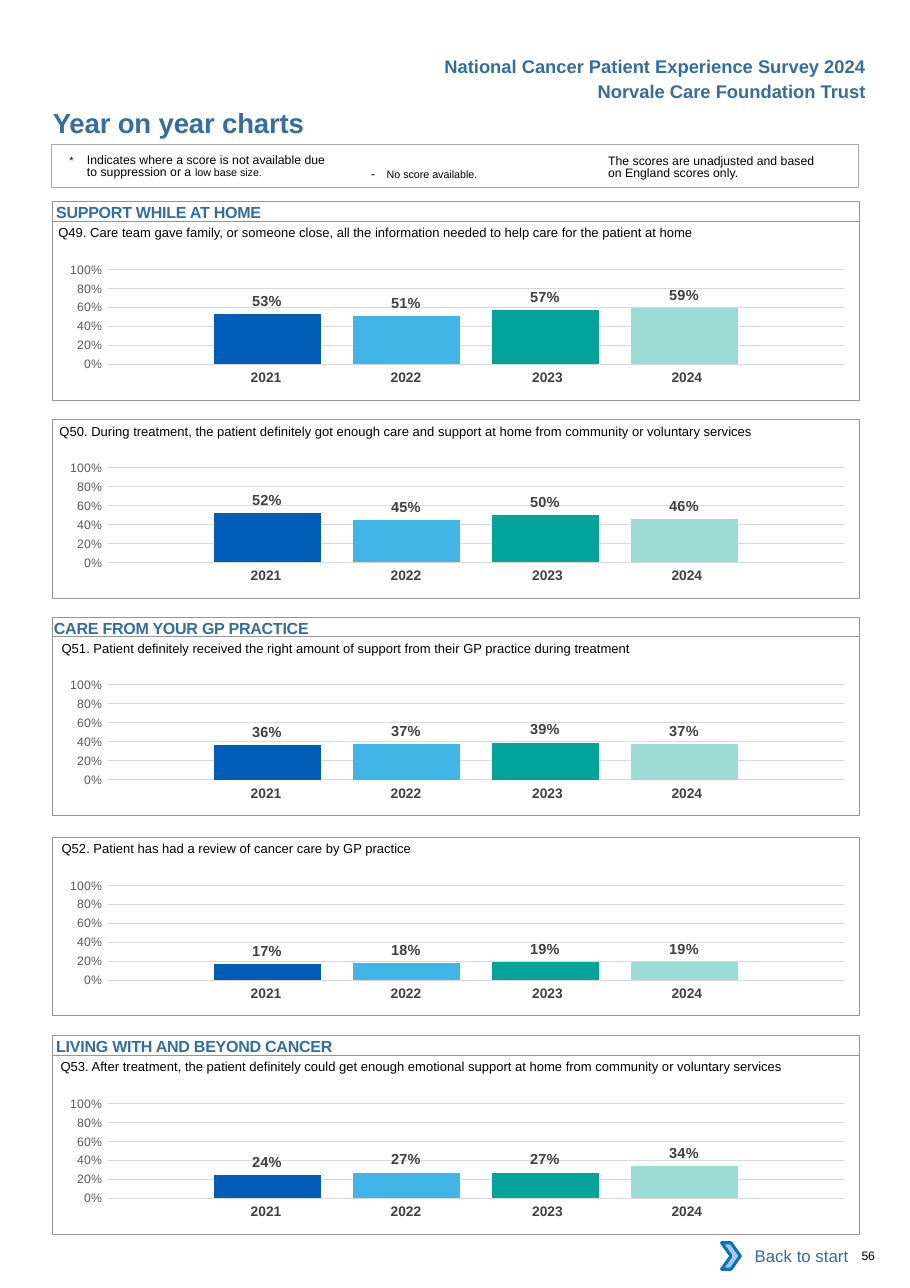
from lxml.etree import SubElement
from pptx import Presentation
from pptx.chart.data import CategoryChartData
from pptx.dml.color import RGBColor
from pptx.enum.chart import XL_CHART_TYPE, XL_LABEL_POSITION, XL_TICK_MARK
from pptx.enum.shapes import MSO_SHAPE
from pptx.enum.text import MSO_ANCHOR, PP_ALIGN
from pptx.oxml import parse_xml
from pptx.oxml.ns import nsdecls, qn
from pptx.util import Inches, Pt

COLORS = {
    "heading": "336E9F", "text": "000000", "year": "414042", "axis": "595959",
    "label": "404040", "grid": "D9D9D9", "frame": "939598", "note frame": "A9AAAD",
    "white": "FFFFFF", "arrow": "A8C7E9", "arrow line": "0A74BB",
}
YEARS = {"2021": "005EB8", "2022": "41B6E6", "2023": "00A499", "2024": "9CDCD7"}
YEAR_COLUMNS = [(1.27, 0), (1.27, 0), (1.34, 0.04), (1.27, 0.12)]  # width, right margin
PLOT_AREA = {"x": 0.079, "y": 0.145, "w": 0.915, "h": 0.666}
NO_GRID_STYLE = "{2D5ABB26-0587-4C30-8999-92F81FD0307C}"
FRAME_LEFT, FRAME_WIDTH, FRAME_HEIGHT = 0.48, 7.32, 1.62

# Frame top, question left, question, scores by year
QUESTIONS = [
    (2.01, 0.53, "Q49. Care team gave family, or someone close, all the information needed "
     "to help care for the patient at home", [0.53, 0.51, 0.57, 0.59]),
    (3.81, 0.54, "Q50. During treatment, the patient definitely got enough care and support "
     "at home from community or voluntary services", [0.52, 0.45, 0.50, 0.46]),
    (5.78, 0.56, "Q51. Patient definitely received the right amount of support from their "
     "GP practice during treatment", [0.36, 0.37, 0.39, 0.37]),
    (7.60, 0.56, "Q52. Patient has had a review of cancer care by GP practice",
     [0.17, 0.18, 0.19, 0.19]),
    (9.58, 0.55, "Q53. After treatment, the patient definitely could get enough emotional "
     "support at home from community or voluntary services", [0.24, 0.27, 0.27, 0.34]),
]
# Top, text indent, section
SECTIONS = [
    (1.83, 0.03, "SUPPORT WHILE AT HOME"),
    (5.60, 0.01, "CARE FROM YOUR GP PRACTICE"),
    (9.40, 0.03, "LIVING WITH AND BEYOND CANCER"),
]


def set_attributes(target, values):
    for name, value in values.items():
        setattr(target, name, value)


def set_font(font, size, color, bold=False, name="Arial"):
    set_attributes(font, {"size": Pt(size), "bold": bold, "name": name})
    font.color.rgb = RGBColor.from_string(COLORS[color])


def write_text(frame, parts, color="text", bold=False, align=PP_ALIGN.LEFT, margins=(0, 0, 0, 0),
               anchor=MSO_ANCHOR.TOP, line_spacing=None):
    """Write parts of (text, size, letter spacing) as one paragraph."""
    left, top, right, bottom = map(Inches, margins)
    set_attributes(frame, {
        "word_wrap": True, "vertical_anchor": anchor, "margin_left": left,
        "margin_top": top, "margin_right": right, "margin_bottom": bottom,
    })
    paragraph = frame.paragraphs[0]
    set_attributes(paragraph, {"alignment": align, "line_spacing": line_spacing})
    for text, size, letter_spacing in parts:
        run = paragraph.add_run()
        run.text = text
        set_font(run.font, size, color, bold)
        run.font._element.set("spc", str(round(letter_spacing * 100)))
    return paragraph


def add_text(slide, box, parts, **text_format):
    shape = slide.shapes.add_textbox(*map(Inches, box))
    return write_text(shape.text_frame, parts, **text_format)


def add_box(slide, box, fill=None, line=None, width=0.5, kind=MSO_SHAPE.RECTANGLE):
    shape = slide.shapes.add_shape(kind, *map(Inches, box))
    shape.shadow.inherit = False
    for format_part, color in ((shape.fill, fill), (shape.line.fill, line)):
        if color:
            format_part.solid()
            format_part.fore_color.rgb = RGBColor.from_string(COLORS[color])
        else:
            format_part.background()
    if line:
        shape.line.width = Pt(width)
    return shape


def style_value_axis(axis):
    set_attributes(axis, {
        "minimum_scale": 0, "maximum_scale": 1, "major_unit": 0.2,
        "major_tick_mark": XL_TICK_MARK.NONE, "minor_tick_mark": XL_TICK_MARK.NONE,
        "has_major_gridlines": True,
    })
    set_attributes(axis.tick_labels, {"number_format": "0%", "number_format_is_linked": False})
    set_font(axis.tick_labels.font, 8, "axis")
    axis.format.line.fill.background()
    grid_line = axis.major_gridlines.format.line
    grid_line.color.rgb = RGBColor.from_string(COLORS["grid"])
    grid_line.width = Pt(0.75)


def clear_background_and_place_plot(chart):
    chart_element = chart._chartSpace.find(qn("c:chart"))
    chart_element.addnext(parse_xml(
        f'<c:spPr {nsdecls("c", "a")}><a:noFill/><a:ln><a:noFill/></a:ln></c:spPr>'))
    plot_area = chart_element.find(qn("c:plotArea"))
    for layout in plot_area.findall(qn("c:layout")):
        plot_area.remove(layout)
    layout = parse_xml(f'<c:layout {nsdecls("c")}><c:manualLayout/></c:layout>')
    settings = {"layoutTarget": "inner", "xMode": "edge", "yMode": "edge", **PLOT_AREA}
    for name, value in settings.items():
        SubElement(layout[0], qn(f"c:{name}")).set("val", str(value))
    plot_area.insert(0, layout)


def add_score_chart(slide, top, scores):
    data = CategoryChartData(number_format="0%")
    data.categories = ["1"]
    for number, score in enumerate(scores, 1):
        data.add_series(f"Series {number}", [score])
    chart = slide.shapes.add_chart(
        XL_CHART_TYPE.COLUMN_CLUSTERED, Inches(0.39), Inches(top),
        Inches(7.32), Inches(1.29), data).chart
    set_attributes(chart, {"has_legend": False, "has_title": False})
    set_font(chart.font, 10, "text", name="Calibri")
    chart.category_axis.visible = False
    style_value_axis(chart.value_axis)
    plot = chart.plots[0]
    set_attributes(plot, {"gap_width": 200, "overlap": -30, "vary_by_categories": False})
    for series, color in zip(plot.series, YEARS.values()):
        series.format.fill.solid()
        series.format.fill.fore_color.rgb = RGBColor.from_string(color)
        set_attributes(series.data_labels, {
            "show_value": True, "position": XL_LABEL_POSITION.OUTSIDE_END,
            "number_format": "0%", "number_format_is_linked": False,
        })
        set_font(series.data_labels.font, 9.5, "label", bold=True)
    clear_background_and_place_plot(chart)


def add_year_table(slide, top):
    table = slide.shapes.add_table(1, len(YEARS), Inches(1.73), Inches(top),
                                   Inches(5.15), Inches(0.27)).table
    set_attributes(table, {"first_row": False, "horz_banding": False})
    table._tbl.tblPr.find(qn("a:tableStyleId")).text = NO_GRID_STYLE
    for index, (year, (width, right_margin)) in enumerate(zip(YEARS, YEAR_COLUMNS)):
        table.columns[index].width = Inches(width)
        cell = table.cell(0, index)
        cell.fill.background()
        set_attributes(cell, {"margin_left": Inches(0.1), "margin_right": Inches(right_margin)})
        paragraph = cell.text_frame.paragraphs[0]
        set_attributes(paragraph, {"text": year, "alignment": PP_ALIGN.CENTER})
        set_font(paragraph.runs[0].font, 9, "year", bold=True)


def add_question(slide, top, left, question, scores):
    add_text(slide, (left, top - 0.06, 7.2, 0.24), [(question, 8.5, 0)], margins=(0, 0.09, 0, 0))
    add_score_chart(slide, top + 0.25, scores)
    add_year_table(slide, top + 1.3)
    add_box(slide, (FRAME_LEFT, top, FRAME_WIDTH, FRAME_HEIGHT), line="frame")


def add_notes(slide):
    add_box(slide, (0.47, 1.31, FRAME_WIDTH, 0.39), line="note frame", width=0.75)
    paragraph = add_text(
        slide, (0.63, 1.37, 2.4, 0.27),
        [("*\t", 7, 0), ("Indicates where a score is not available due to suppression or a ", 8, 0),
         ("low base size.", 7, 0)], margins=(0, 0.03, 0, 0), line_spacing=Pt(8.1))
    for name, inches in {"marL": 0.16, "indent": -0.16}.items():
        paragraph._p.get_or_add_pPr().set(name, str(Inches(inches)))
    add_text(slide, (3.37, 1.51, 1.7, 0.14), [("- ", 8, 2.6), ("No score available.", 7, 0)])
    add_text(slide, (5.52, 1.38, 1.97, 0.27),
             [("The scores are unadjusted and based on England scores only.", 8, 0)],
             margins=(0, 0.03, 0, 0), line_spacing=Pt(8.1))


def add_footer(slide):
    link = add_box(slide, (6.62, 11.19, 1.18, 0.42), fill="white")
    write_text(link.text_frame, [("Back to start", 11, 0)], color="heading", align=PP_ALIGN.RIGHT,
               anchor=MSO_ANCHOR.MIDDLE, margins=(0.1, 0.05, 0.1, 0.05))
    add_box(slide, (6.55, 11.28, 0.17, 0.24), fill="arrow", line="arrow line", width=2,
            kind=MSO_SHAPE.CHEVRON)
    add_text(slide, (7.82, 11.33, 0.41, 0.13), [("56", 8, -0.2)])


def main():
    presentation = Presentation()
    set_attributes(presentation, {"slide_width": Inches(8.26), "slide_height": Inches(11.69)})
    slide = presentation.slides.add_slide(presentation.slide_layouts[6])

    # Header
    for top, text in ((0.5, "National Cancer Patient Experience Survey 2024"),
                      (0.73, "Norvale Care Foundation Trust")):
        add_text(slide, (3.36, top, 4.5, 0.2), [(text, 12, 0)], color="heading", bold=True,
                 align=PP_ALIGN.RIGHT)
    add_text(slide, (0.48, 0.96, 4.5, 0.3), [("Year on year charts", 18, -0.1)],
             color="heading", bold=True)
    add_notes(slide)
    add_footer(slide)

    # Sections and their questions
    for top, indent, section in SECTIONS:
        heading = add_box(slide, (FRAME_LEFT, top, FRAME_WIDTH, 0.18), line="frame")
        write_text(heading.text_frame, [(section, 10.5, -0.15)], color="heading", bold=True,
                   margins=(indent, 0.01, 0, 0))
    for question in QUESTIONS:
        add_question(slide, *question)

    presentation.save("out.pptx")


if __name__ == "__main__":
    main()
